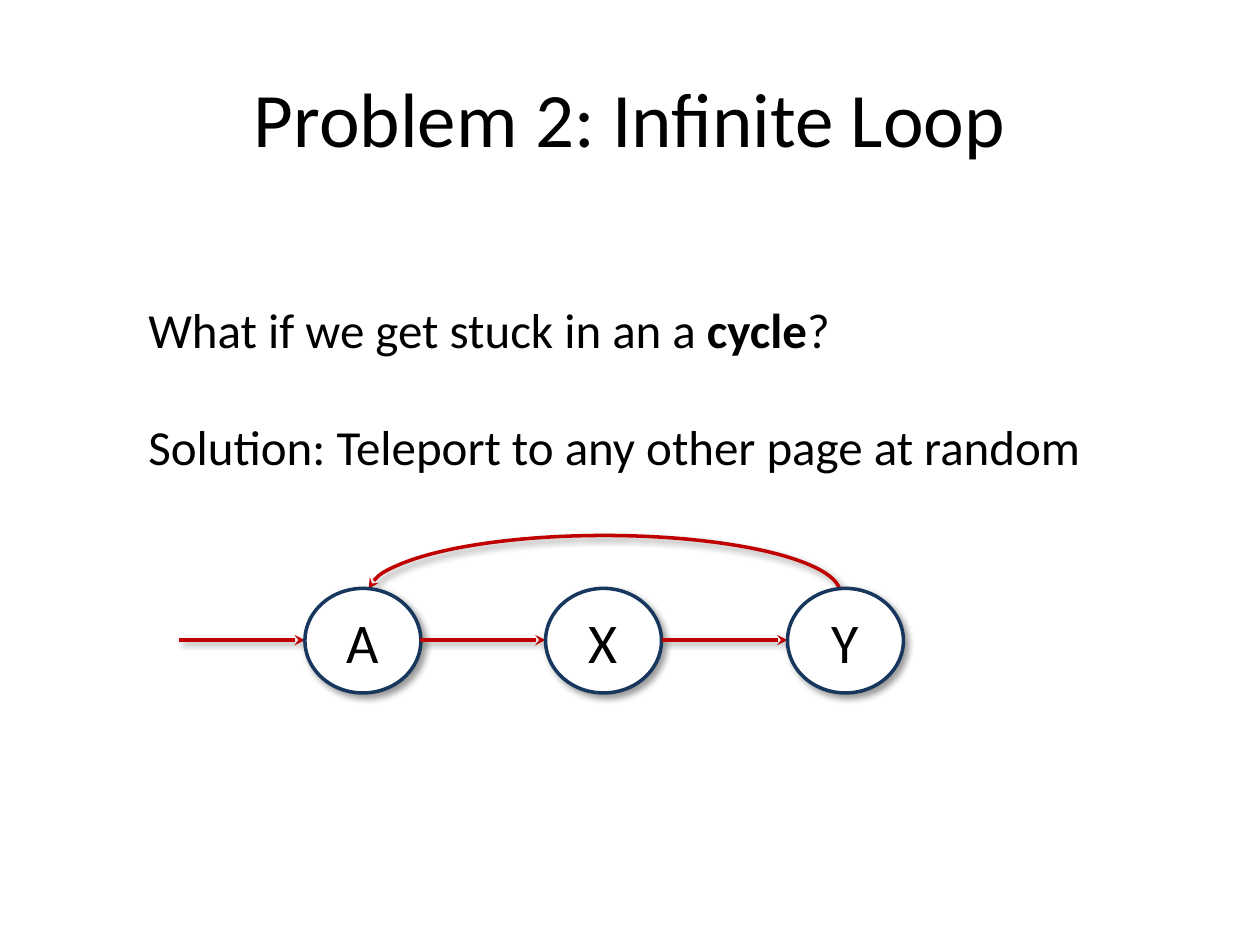
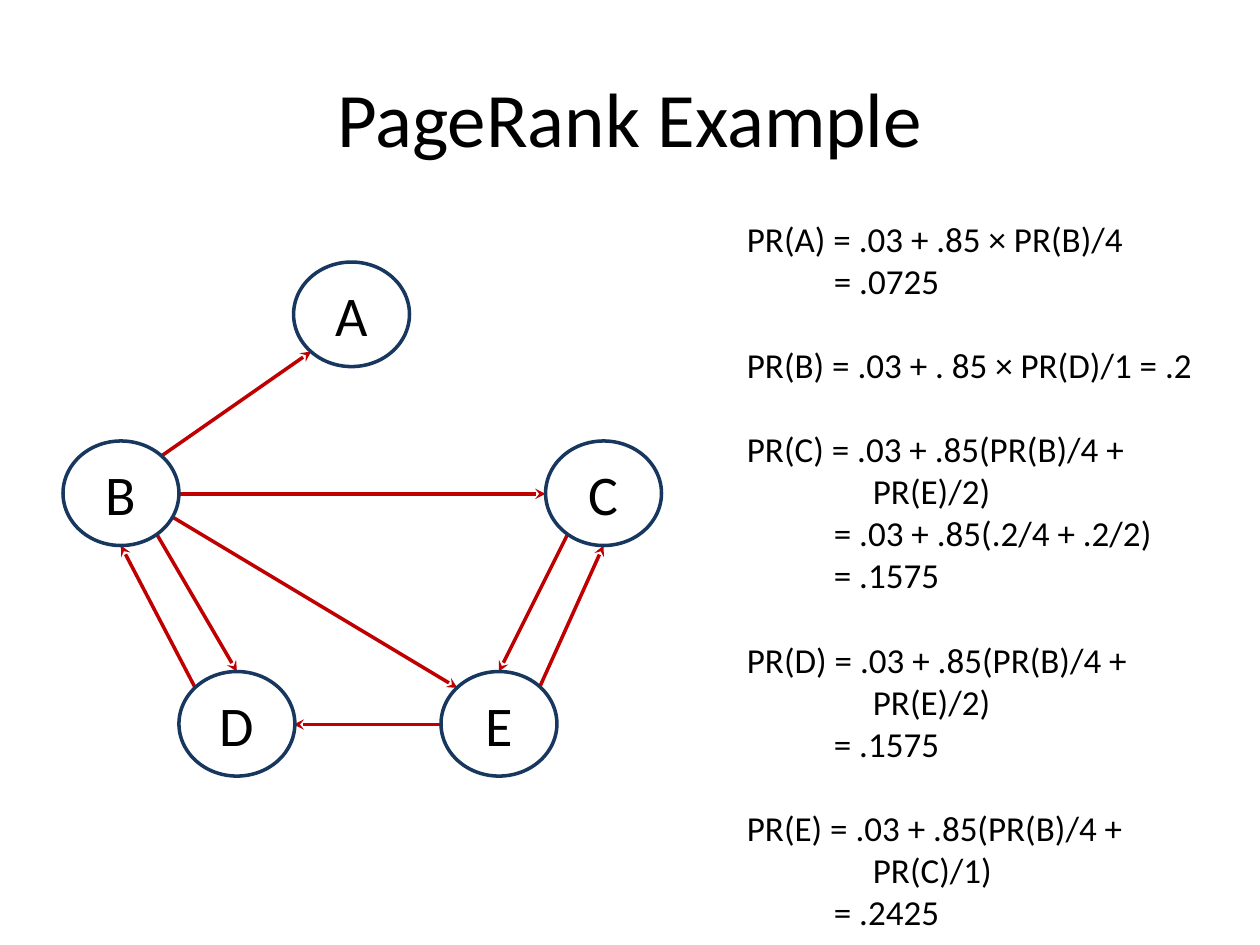
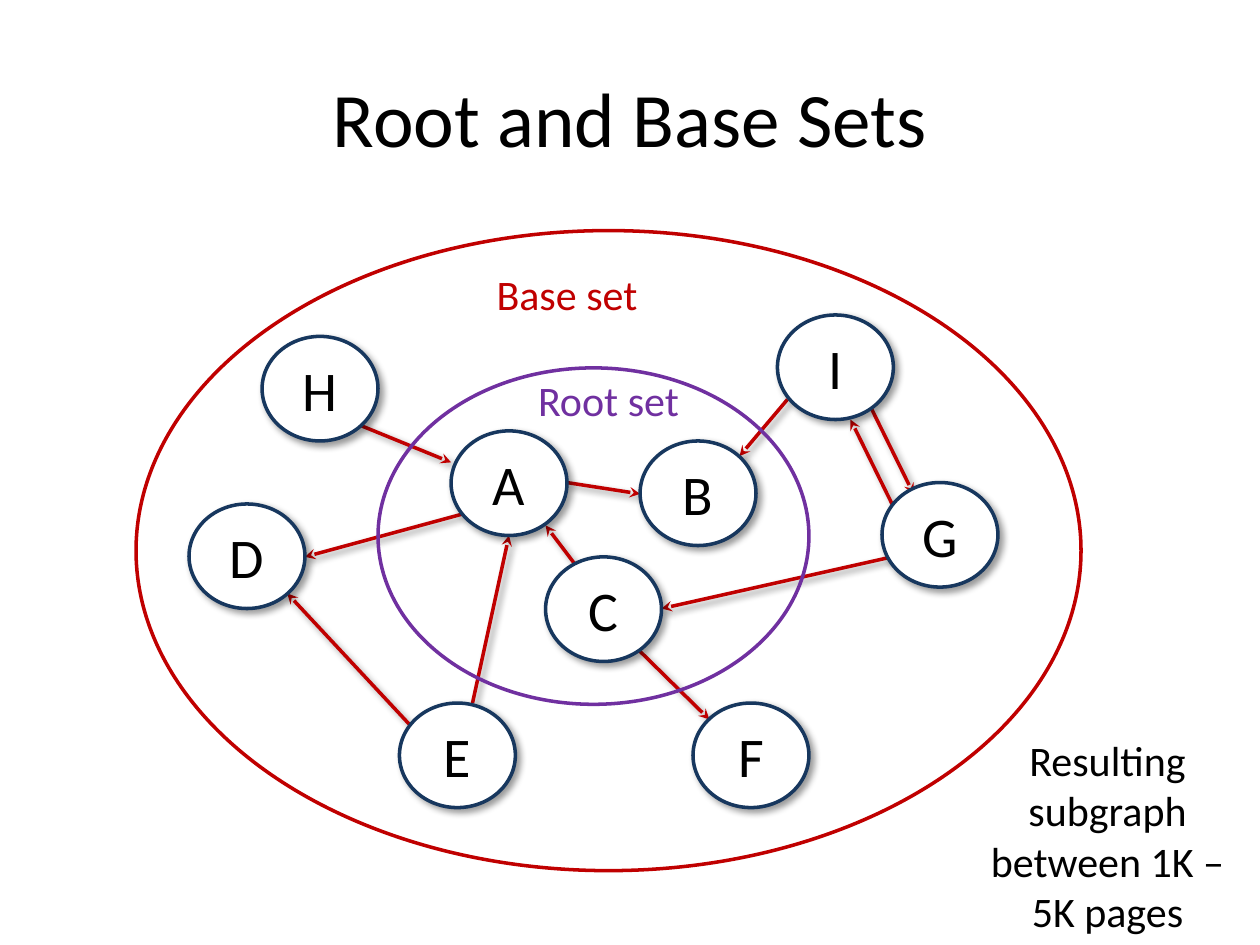
from lxml.etree import SubElement
from pptx import Presentation
from pptx.dml.color import RGBColor
from pptx.enum.shapes import MSO_CONNECTOR as CONNECTOR, MSO_SHAPE as SHAPE
from pptx.enum.text import MSO_ANCHOR as ANCHOR, MSO_AUTO_SIZE as AUTO_SIZE, PP_ALIGN as ALIGN
from pptx.oxml.ns import qn
from pptx.util import Inches, Pt

BLACK = RGBColor(0x00, 0x00, 0x00)
WHITE = RGBColor(0xFF, 0xFF, 0xFF)
NAVY = RGBColor(0x17, 0x37, 0x5E)
RED = RGBColor(0xC0, 0x00, 0x00)
PURPLE = RGBColor(0x70, 0x30, 0xA0)
FONT = "Calibri"
NODE_WIDTH, NODE_HEIGHT = 0.92, 0.83


class Deck:
    def __init__(self):
        self.prs = Presentation()
        self.prs.slide_width, self.prs.slide_height = Inches(10), Inches(7.5)
        self.slide = None
        self.shadowed = False

    def new_slide(self, title, shadowed):
        self.slide = self.prs.slides.add_slide(self.prs.slide_layouts[5])
        self.shadowed = shadowed
        heading = self.slide.shapes.title
        heading.left, heading.top = Inches(0.5), Inches(0.3)
        heading.width, heading.height = Inches(9), Inches(1.25)
        frame = heading.text_frame
        frame.text = title
        frame.vertical_anchor = ANCHOR.MIDDLE
        self.format_text(frame.paragraphs[0], 44, align=ALIGN.CENTER)

    def format_text(self, paragraph, size, color=BLACK, align=ALIGN.LEFT):
        paragraph.alignment = align
        for run in paragraph.runs:
            run.font.name = FONT
            run.font.size = Pt(size)
            run.font.color.rgb = color

    def outline(self, shape, color, shadowed, arrow_end=None):
        """Style the line, its optional arrowhead and the shadow."""
        shape.line.color.rgb = color
        shape.line.width = Pt(2)
        properties = shape.element.spPr
        if arrow_end:
            SubElement(properties.find(qn("a:ln")), qn(f"a:{arrow_end}"), type="stealth")
        effects = SubElement(properties, qn("a:effectLst"))
        if shadowed:
            shadow = SubElement(effects, qn("a:outerShdw"), blurRad=str(Pt(4)), dist=str(Pt(3)),
                                dir="2700000", algn="tl", rotWithShape="0")
            tint = SubElement(shadow, qn("a:srgbClr"), val=str(BLACK))
            SubElement(tint, qn("a:alpha"), val="40000")

    def add_outline_shape(self, kind, left, top, width, height):
        return self.slide.shapes.add_shape(
            kind, Inches(left), Inches(top), Inches(width), Inches(height))

    def node(self, letter, left, top):
        page = self.add_outline_shape(SHAPE.OVAL, left, top, NODE_WIDTH, NODE_HEIGHT)
        page.fill.solid()
        page.fill.fore_color.rgb = WHITE
        self.outline(page, NAVY, self.shadowed)
        page.text_frame.text = letter
        page.text_frame.vertical_anchor = ANCHOR.MIDDLE
        self.format_text(page.text_frame.paragraphs[0], 32, align=ALIGN.CENTER)

    def set_boundary(self, left, top, width, height, color):
        boundary = self.add_outline_shape(SHAPE.OVAL, left, top, width, height)
        boundary.fill.background()
        self.outline(boundary, color, shadowed=False)

    def back_arc(self, left, top, width, height):
        """Draw the upper half of an ellipse with an arrowhead at its left end."""
        arc = self.add_outline_shape(SHAPE.ARC, left, top, width, height)
        arc.adjustments[0] = 108.665
        arc.adjustments[1] = 0
        arc.fill.background()
        self.outline(arc, RED, self.shadowed, "headEnd")

    def arrow(self, x1, y1, x2, y2):
        link = self.slide.shapes.add_connector(
            CONNECTOR.STRAIGHT, Inches(x1), Inches(y1), Inches(x2), Inches(y2))
        self.outline(link, RED, self.shadowed, "tailEnd")

    def text(self, lines, left, top, width, height, size, color=BLACK, align=ALIGN.LEFT):
        box = self.slide.shapes.add_textbox(
            Inches(left), Inches(top), Inches(width), Inches(height))
        frame = box.text_frame
        frame.word_wrap = True
        frame.auto_size = AUTO_SIZE.SHAPE_TO_FIT_TEXT
        frame.text = "\n".join(lines)
        for paragraph in frame.paragraphs:
            self.format_text(paragraph, size, color, align)
        return frame.paragraphs


def infinite_loop(deck):
    deck.new_slide("Problem 2: Infinite Loop", shadowed=True)
    question, solution = deck.text(
        ["What if we get stuck in an a ", "Solution: Teleport to any other page at random"],
        1.08, 2.33, 7.92, 1.51, 28)
    for words, bold in (("cycle", True), ("?", False)):
        run = question.add_run()
        run.text = words
        run.font.bold = bold
    deck.format_text(question, 28)
    solution.space_before = Pt(33)

    deck.back_arc(2.92, 4.25, 3.75, 0.92)
    for letter, left in (("A", 2.42), ("X", 4.33), ("Y", 6.25)):
        deck.arrow(left - 1, 5.08, left, 5.08)
        deck.node(letter, left, 4.67)


def pagerank_example(deck):
    deck.new_slide("PageRank Example", shadowed=False)
    equations = [
        "PR(A) = .03 + .85 × PR(B)/4", "= .0725",
        "PR(B) = .03 + . 85 × PR(D)/1 = .2",
        "PR(C) = .03 + .85(PR(B)/4 +", "PR(E)/2)", "= .03 + .85(.2/4 + .2/2)", "= .1575",
        "PR(D) = .03 + .85(PR(B)/4 +", "PR(E)/2)", "= .1575",
        "PR(E) = .03 + .85(PR(B)/4 +", "PR(C)/1)", "= .2425",
    ]
    paragraphs = deck.text(equations, 5.83, 1.68, 4.17, 6.16, 20)
    for index, (equation, paragraph) in enumerate(zip(equations, paragraphs)):
        if equation.startswith("="):
            indent = 0.69
        elif "=" not in equation:
            indent = 1
        else:
            indent = 0
            paragraph.space_before = Pt(24 if index else 0)
        properties = paragraph._p.get_or_add_pPr()
        properties.set("marL", str(Inches(indent)))
        properties.set("indent", "0")

    for ends in (
        (1.28, 3.62, 2.47, 2.79), (1.42, 3.92, 4.33, 3.92), (1.25, 4.25, 1.88, 5.33),
        (1.55, 5.46, 0.96, 4.33), (3.5, 5.75, 2.33, 5.75), (4.5, 4.25, 3.96, 5.33),
        (4.28, 5.46, 4.79, 4.33), (1.33, 4.08, 3.63, 5.46),
    ):
        deck.arrow(*ends)
    for page in (("A", 2.33, 2.08), ("B", 0.5, 3.5), ("C", 4.33, 3.5),
                 ("D", 1.42, 5.33), ("E", 3.5, 5.33)):
        deck.node(*page)


def root_and_base_sets(deck):
    deck.new_slide("Root and Base Sets", shadowed=True)
    deck.set_boundary(1.08, 1.83, 7.5, 5.08, RED)
    for ends in (
        (2.87, 3.38, 3.58, 3.67), (3.67, 4.08, 2.42, 4.42), (3.25, 5.75, 2.28, 4.71),
        (5.08, 5.17, 5.63, 5.71), (6.25, 3.17, 5.87, 3.62), (6.92, 3.25, 7.25, 3.92),
        (7.08, 4, 6.75, 3.33), (7.08, 4.42, 5.25, 4.83), (3.75, 5.58, 4.04, 4.25),
        (4.5, 3.83, 5.08, 3.92), (4.58, 4.5, 4.33, 4.17),
    ):
        deck.arrow(*ends)
    deck.set_boundary(3, 2.92, 3.42, 2.67, PURPLE)
    for page in (("A", 3.58, 3.42), ("B", 5.08, 3.5), ("C", 4.33, 4.42),
                 ("D", 1.5, 4), ("E", 3.17, 5.58), ("F", 5.5, 5.58),
                 ("G", 7, 3.83), ("H", 2.08, 2.67), ("I", 6.17, 2.5)):
        deck.node(*page)
    for label, left, top, width, height, color in (
        ("Base set", 3.75, 2.08, 1.5, 0.5, RED),
        ("Root set", 4.13, 2.92, 1.4, 0.5, PURPLE),
        ("Resulting subgraph between 1K – 5K pages", 7.58, 5.78, 2.42, 1.72, BLACK),
    ):
        deck.text([label], left, top, width, height, 24, color, ALIGN.CENTER)


def main():
    deck = Deck()
    infinite_loop(deck)
    pagerank_example(deck)
    root_and_base_sets(deck)
    deck.prs.save("out.pptx")


if __name__ == "__main__":
    main()
